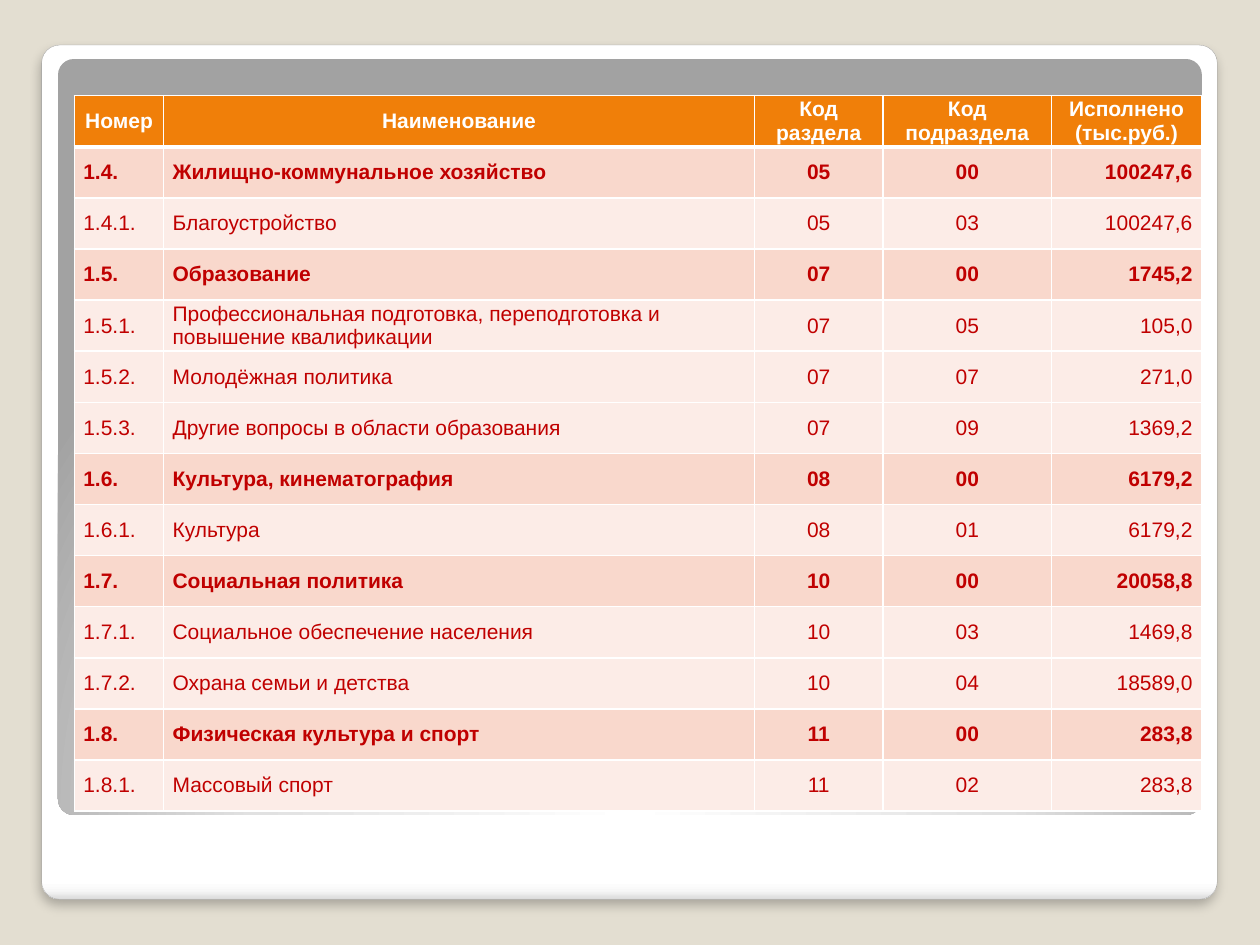
import pptx
import pptx.dml.color
import pptx.enum.shapes
import pptx.enum.text
import pptx.oxml
import pptx.oxml.ns
import pptx.util
from lxml import etree

Cm, Pt = pptx.util.Cm, pptx.util.Pt
RGB = pptx.dml.color.RGBColor.from_string
ALIGN = pptx.enum.text.PP_ALIGN
qn = pptx.oxml.ns.qn

COLORS = {
    "background": "E3DED1",
    "panel_edge": "A4A4A4",
    "shadow": "000000",
    "white": "FFFFFF",
    "header": "F07F09",
    "section": "F9D8CC",
    "item": "FCECE7",
    "text": "C00000",
}
PANEL_STOPS = [(0, "FFFFFF"), (98, "FFFFFF"), (99, "F7F7F7"), (100, "DADADA")]
INNER_STOPS = [(0, "FFFFFF"), (55, "E1E1E1"), (100, "A2A2A2")]
LINEAR_DOWN = '<a:lin ang="5400000" scaled="0"/>'
CIRCLE_FROM_BELOW = ('<a:path path="circle"><a:fillToRect l="50000" t="175000" '
                     'r="50000" b="-75000"/></a:path>')

HEADER = ["Номер", "Наименование", "Код раздела", "Код\vподраздела",
          "Исполнено\v(тыс.руб.)"]
ROWS = [
    ("1.4.", "Жилищно-коммунальное хозяйство", "05", "00", "100247,6"),
    ("1.4.1.", "Благоустройство", "05", "03", "100247,6"),
    ("1.5.", "Образование", "07", "00", "1745,2"),
    ("1.5.1.", "Профессиональная подготовка, переподготовка и повышение квалификации",
     "07", "05", "105,0"),
    ("1.5.2.", "Молодёжная политика", "07", "07", "271,0"),
    ("1.5.3.", "Другие вопросы в области образования", "07", "09", "1369,2"),
    ("1.6.", "Культура, кинематография", "08", "00", "6179,2"),
    ("1.6.1.", "Культура", "08", "01", "6179,2"),
    ("1.7.", "Социальная политика", "10", "00", "20058,8"),
    ("1.7.1.", "Социальное обеспечение населения", "10", "03", "1469,8"),
    ("1.7.2.", "Охрана семьи и детства", "10", "04", "18589,0"),
    ("1.8.", "Физическая культура и спорт", "11", "00", "283,8"),
    ("1.8.1.", "Массовый спорт", "11", "02", "283,8"),
]
COLUMNS = [
    (1.8, ALIGN.LEFT),
    (11.91, ALIGN.LEFT),
    (2.59, ALIGN.CENTER),
    (3.4, ALIGN.CENTER),
    (3.02, ALIGN.RIGHT),
]
ROW_HEIGHT = 1.03
SUMMARY_CODE = "00"


def a_xml(tag, attrs, inner):
    ns = pptx.oxml.ns.nsdecls("a")
    return pptx.oxml.parse_xml(f"<a:{tag} {ns} {attrs}>{inner}</a:{tag}>")


def add_panel(slide, left, top, width, height, stops, direction):
    """Add a rounded rectangle with a multi-stop gradient and no line."""
    s = slide.shapes.add_shape(pptx.enum.shapes.MSO_SHAPE.ROUNDED_RECTANGLE,
                               Cm(left), Cm(top), Cm(width), Cm(height))
    s.adjustments[0] = 0.021
    s.line.fill.background()
    s.shadow.inherit = False
    stop_xml = "".join(f'<a:gs pos="{pos * 1000}"><a:srgbClr val="{color}"/></a:gs>'
                       for pos, color in stops)
    gradient = a_xml("gradFill", 'rotWithShape="1"',
                     f"<a:gsLst>{stop_xml}</a:gsLst>{direction}")
    s._element.spPr.find(qn("a:prstGeom")).addnext(gradient)
    return s


def add_shadow(s):
    effects = s._element.spPr.find(qn("a:effectLst"))
    effects.append(a_xml(
        "outerShdw",
        f'blurRad="{Pt(6)}" dist="{Pt(4)}" dir="5400000" algn="t" rotWithShape="0"',
        f'<a:srgbClr val="{COLORS["shadow"]}"><a:alpha val="25000"/></a:srgbClr>'))


def set_borders(cell, top, bottom):
    """Draw white borders; the sides are 1 pt wide."""
    tcPr = cell._tc.get_or_add_tcPr()
    widths = [("lnL", 1), ("lnR", 1), ("lnT", top), ("lnB", bottom)]
    for i, (side, width) in enumerate(widths):
        ln = etree.Element(qn(f"a:{side}"), w=str(Pt(width)))
        fill = etree.SubElement(ln, qn("a:solidFill"))
        etree.SubElement(fill, qn("a:srgbClr"), val=COLORS["white"])
        tcPr.insert(i, ln)


def fill_cell(cell, text, align, fill, color, bold):
    cell.text = text
    cell.vertical_anchor = pptx.enum.text.MSO_ANCHOR.MIDDLE
    cell.margin_left = cell.margin_right = Cm(0.18)
    cell.margin_top = cell.margin_bottom = 0
    cell.fill.solid()
    cell.fill.fore_color.rgb = RGB(COLORS[fill])
    p = cell.text_frame.paragraphs[0]
    p.alignment = align
    p.font.name = "Arial"
    p.font.size = Pt(12)
    p.font.bold = bold
    p.font.color.rgb = RGB(COLORS[color])


def add_budget_table(slide, left, top):
    lines = [HEADER] + ROWS
    width = sum(w for w, _ in COLUMNS)
    table = slide.shapes.add_table(len(lines), len(COLUMNS), Cm(left), Cm(top),
                                   Cm(width), Cm(ROW_HEIGHT * len(lines))).table
    table.first_row = table.horz_banding = False
    for column, (w, _) in zip(table.columns, COLUMNS):
        column.width = Cm(w)
    for i, line in enumerate(lines):
        table.rows[i].height = Cm(ROW_HEIGHT)
        is_header = i == 0
        is_section = line[3] == SUMMARY_CODE
        fill = "header" if is_header else "section" if is_section else "item"
        for j, (text, (_, align)) in enumerate(zip(line, COLUMNS)):
            cell = table.cell(i, j)
            fill_cell(cell, text, ALIGN.CENTER if is_header else align, fill,
                      "white" if is_header else "text", is_header or is_section)
            set_borders(cell, top=3 if i == 1 else 1, bottom=3 if is_header else 1)


def main():
    prs = pptx.Presentation()
    prs.slide_width, prs.slide_height = Cm(25.4), Cm(19.05)
    slide = prs.slides.add_slide(prs.slide_layouts[6])
    slide.background.fill.solid()
    slide.background.fill.fore_color.rgb = RGB(COLORS["background"])

    outer = add_panel(slide, 0.84, 0.91, 23.7, 17.22, PANEL_STOPS, LINEAR_DOWN)
    outer.line.color.rgb = RGB(COLORS["panel_edge"])
    outer.line.width = Pt(0.16)
    add_shadow(outer)
    add_panel(slide, 1.17, 1.19, 23.06, 15.24, INNER_STOPS, CIRCLE_FROM_BELOW)
    add_budget_table(slide, 1.5, 1.93)
    prs.save("out.pptx")


if __name__ == "__main__":
    main()
